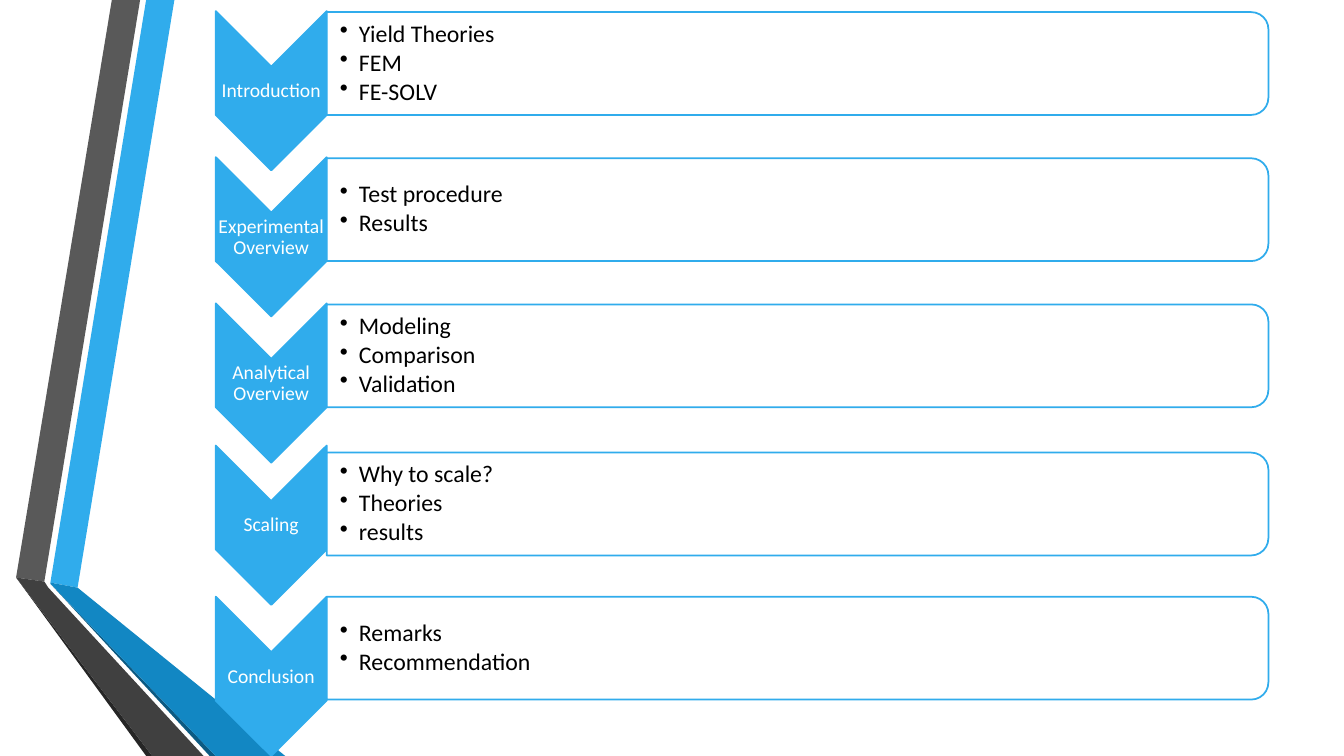
from dataclasses import dataclass

import lxml.etree
import pptx
import pptx.dml.color
import pptx.enum.shapes
import pptx.enum.text
import pptx.oxml.ns
import pptx.shapes.autoshape
import pptx.slide
import pptx.text.text
import pptx.util

Inches = pptx.util.Inches
Pt = pptx.util.Pt
MSO_SHAPE = pptx.enum.shapes.MSO_SHAPE
PP_ALIGN = pptx.enum.text.PP_ALIGN


@dataclass(frozen=True)
class Theme:
    font: str = "Calibri"
    label_size: float = 14
    bullet_size: float = 17
    line_width: float = 1.25
    accent: str = "30ACEC"
    white: str = "FFFFFF"
    black: str = "000000"


@dataclass(frozen=True)
class Ribbon:
    color: str
    points: tuple[tuple[float, float], ...]


@dataclass(frozen=True)
class Section:
    label: str
    chevron_top: float
    box_top: float
    bullets: tuple[str, ...]


THEME = Theme()

RIBBONS = (
    Ribbon("30ACEC", ((0.5, 5.78), (0.77, 5.83), (1.73, 0), (1.45, 0))),
    Ribbon("595959", ((1.39, 0), (1.11, 0), (0.16, 5.73), (0.44, 5.77))),
    Ribbon("262626", ((0.16, 5.73), (1.45, 7.5), (1.51, 7.5))),
    Ribbon("0C5A82", ((0.5, 5.79), (2.08, 7.5), (2.14, 7.5))),
    Ribbon("1287C3", ((0.5, 5.79), (2.14, 7.5), (2.83, 7.5), (0.77, 5.83), (0.5, 5.78))),
    Ribbon("404040", ((2.02, 7.5), (0.48, 5.83), (0.44, 5.77), (0.16, 5.73), (1.51, 7.5))),
)

SECTIONS = (
    Section("Introduction", 0.11, 0.12, ("Yield Theories", "FEM", "FE-SOLV")),
    Section("Experimental Overview", 1.56, 1.57, ("Test procedure", "Results")),
    Section("Analytical Overview", 3.01, 3.02, ("Modeling", "Comparison", "Validation")),
    Section("Scaling", 4.42, 4.49, ("Why to scale?", "Theories", "results")),
    Section("Conclusion", 5.92, 5.92, ("Remarks", "Recommendation")),
)

CHEVRON_LEFT, CHEVRON_WIDTH, CHEVRON_HEIGHT = 2.14, 1.1, 1.58
LABEL_OFFSET, LABEL_HEIGHT = 0.56, 0.47
BOX_LEFT, BOX_WIDTH, BOX_HEIGHT = 3.24, 9.34, 1.02
BODY_OFFSET, BODY_WIDTH, BODY_HEIGHT = 0.05, 9.29, 0.92


def rgb(color: str) -> pptx.dml.color.RGBColor:
    return pptx.dml.color.RGBColor.from_string(color)


def paint(shape: pptx.shapes.autoshape.Shape, fill: str, line: str | None = None) -> None:
    shape.shadow.inherit = False
    shape.fill.solid()
    shape.fill.fore_color.rgb = rgb(fill)
    if line is None:
        shape.line.fill.background()
    else:
        shape.line.color.rgb = rgb(line)
        shape.line.width = Pt(THEME.line_width)


def add_ribbon(page: pptx.slide.Slide, ribbon: Ribbon) -> None:
    points = [(Inches(x), Inches(y)) for x, y in ribbon.points]
    builder = page.shapes.build_freeform(*points[0])
    builder.add_line_segments(points[1:], close=True)
    paint(builder.convert_to_shape(), ribbon.color)


def add_turned_shape(page: pptx.slide.Slide, kind: MSO_SHAPE, left: float, top: float,
                     width: float, height: float, fill: str) -> pptx.shapes.autoshape.Shape:
    """Add a shape turned by 90 degrees that covers the given area as seen."""
    shift = (width - height) / 2
    shape = page.shapes.add_shape(kind, Inches(left + shift), Inches(top - shift),
                                  Inches(height), Inches(width))
    shape.rotation = 90
    paint(shape, fill, THEME.accent)
    return shape


def set_opacity(shape: pptx.shapes.autoshape.Shape, percent: int) -> None:
    color = shape.fill._xPr.find(".//" + pptx.oxml.ns.qn("a:srgbClr"))
    alpha = lxml.etree.SubElement(color, pptx.oxml.ns.qn("a:alpha"))
    alpha.set("val", str(percent * 1000))


def add_text_frame(page: pptx.slide.Slide, left: float, top: float, width: float,
                   height: float, left_inset: float) -> pptx.text.text.TextFrame:
    box = page.shapes.add_textbox(Inches(left), Inches(top), Inches(width), Inches(height))
    frame = box.text_frame
    frame.word_wrap = True
    frame.vertical_anchor = pptx.enum.text.MSO_ANCHOR.MIDDLE
    frame.margin_left = Inches(left_inset)
    frame.margin_top = frame.margin_right = frame.margin_bottom = Inches(0.01)
    return frame


def write(para: pptx.text.text._Paragraph, text: str, size: float, color: str,
          space_after: float) -> None:
    para.line_spacing = 0.9
    para.space_after = Pt(space_after)
    span = para.add_run()
    span.text = text
    span.font.name = THEME.font
    span.font.size = Pt(size)
    span.font.color.rgb = rgb(color)


def add_bullet(para: pptx.text.text._Paragraph) -> None:
    properties = para._p.get_or_add_pPr()
    properties.set("marL", str(Inches(0.19)))
    properties.set("indent", str(-Inches(0.19)))
    bullet = lxml.etree.SubElement(properties, pptx.oxml.ns.qn("a:buChar"))
    bullet.set("char", "•")


def add_section(page: pptx.slide.Slide, section: Section) -> None:
    add_turned_shape(page, MSO_SHAPE.CHEVRON, CHEVRON_LEFT, section.chevron_top,
                     CHEVRON_WIDTH, CHEVRON_HEIGHT, THEME.accent)
    label = add_text_frame(page, CHEVRON_LEFT, section.chevron_top + LABEL_OFFSET,
                           CHEVRON_WIDTH, LABEL_HEIGHT, 0.01)
    label.paragraphs[0].alignment = PP_ALIGN.CENTER
    write(label.paragraphs[0], section.label, THEME.label_size, THEME.white, 4.9)

    box = add_turned_shape(page, MSO_SHAPE.ROUND_2_SAME_RECTANGLE, BOX_LEFT, section.box_top,
                           BOX_WIDTH, BOX_HEIGHT, THEME.white)
    set_opacity(box, 90)
    body = add_text_frame(page, BOX_LEFT, section.box_top + BODY_OFFSET,
                          BODY_WIDTH, BODY_HEIGHT, 0.13)
    for index, text in enumerate(section.bullets):
        para = body.add_paragraph() if index else body.paragraphs[0]
        write(para, text, THEME.bullet_size, THEME.black, 2.2)
        add_bullet(para)


def main() -> None:
    deck = pptx.Presentation()
    deck.slide_width = Inches(13.33)
    deck.slide_height = Inches(7.5)
    page = deck.slides.add_slide(deck.slide_layouts[6])
    for ribbon in RIBBONS:
        add_ribbon(page, ribbon)
    for section in SECTIONS:
        add_section(page, section)
    deck.save("out.pptx")


if __name__ == "__main__":
    main()
